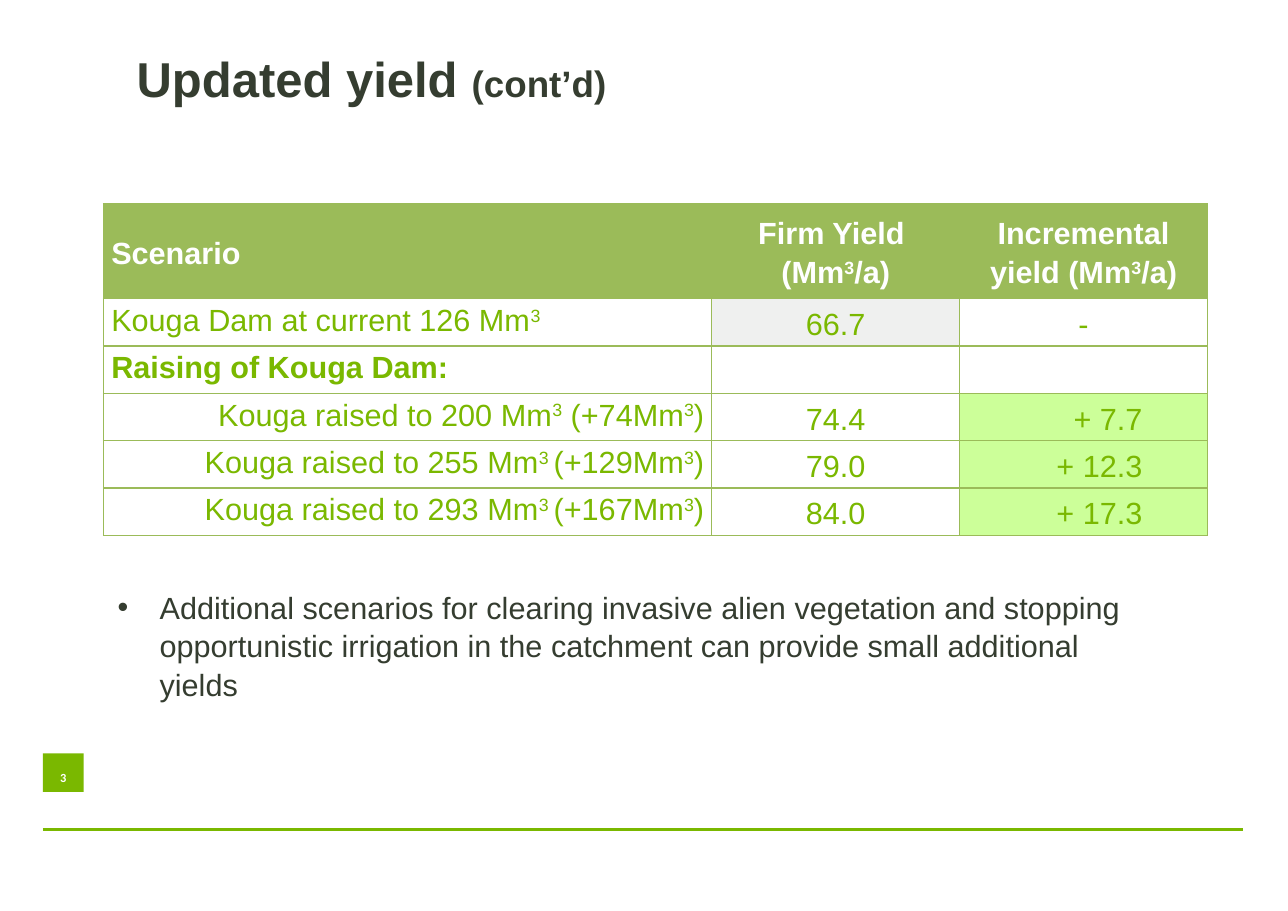
from lxml.etree import SubElement
from pptx import Presentation
from pptx.dml.color import RGBColor
from pptx.enum.shapes import MSO_CONNECTOR, MSO_SHAPE
from pptx.enum.text import MSO_ANCHOR, MSO_AUTO_SIZE, PP_ALIGN
from pptx.oxml.ns import qn
from pptx.util import Pt

PX = 9144  # EMU per px, 100 px to the inch
GREEN, OLIVE, INK, WHITE = "7AB800", "9BBB59", "353D30", "FFFFFF"
GREY, MINT = "EFF0EF", "CCFF99"
LEFT, CENTER, RIGHT = PP_ALIGN.LEFT, PP_ALIGN.CENTER, PP_ALIGN.RIGHT


def px(length):
    return length * PX


def color(hex_code):
    return RGBColor.from_string(hex_code)


def write(paragraph, text, size=20, ink=INK, bold=False, font="Arial",
          align=LEFT, spacing=1.0, before=0, after=0, baseline=0):
    """Add text; parts between ^ marks are superscript, \n breaks the line."""
    paragraph.alignment = align
    paragraph.line_spacing = spacing
    paragraph.space_before, paragraph.space_after = Pt(before), Pt(after)
    for part_index, part in enumerate(text.split("^")):
        shift = 30000 if part_index % 2 else baseline
        for line_index, line in enumerate(part.split("\n")):
            if line_index:
                paragraph.add_line_break()
            if not line:
                continue
            run = paragraph.add_run()
            run.text = line
            run.font.name, run.font.size, run.font.bold = font, Pt(size), bold
            run.font.color.rgb = color(ink)
            if shift:
                run.font._element.set("baseline", str(shift))


class YieldSlide:
    def __init__(self, deck):
        self.slide = deck.slides.add_slide(deck.slide_layouts[5])
        self.shapes = self.slide.shapes

    def rule(self, x1, x2, y):
        rule = self.shapes.add_connector(
            MSO_CONNECTOR.STRAIGHT, px(x1), px(y), px(x2), px(y))
        rule.line.color.rgb, rule.line.width = color(GREEN), Pt(1.5)
        SubElement(rule._element.spPr, qn("a:effectLst"))

    def page_number(self, text, *box):
        badge = self.shapes.add_shape(MSO_SHAPE.RECTANGLE, *map(px, box))
        badge.shadow.inherit = False
        badge.fill.solid()
        badge.fill.fore_color.rgb = color(GREEN)
        badge.line.fill.background()
        frame = badge.text_frame
        frame.margin_left = frame.margin_right = frame.margin_top = 0
        frame.margin_bottom = px(4)
        frame.vertical_anchor = MSO_ANCHOR.MIDDLE
        write(frame.paragraphs[0], text, size=14, ink=WHITE, bold=True,
              font="Calibri", align=CENTER, baseline=-25000)

    def title(self, text, suffix, *box):
        title = self.shapes.title
        title.left, title.top, title.width, title.height = map(px, box)
        frame = title.text_frame
        frame.auto_size = MSO_AUTO_SIZE.NONE
        frame.vertical_anchor = MSO_ANCHOR.TOP
        write(frame.paragraphs[0], text, size=32, bold=True)
        write(frame.paragraphs[0], suffix, size=24, bold=True)

    def bullet(self, text, *box):
        frame = self.shapes.add_textbox(*map(px, box)).text_frame
        frame.word_wrap = True
        paragraph = frame.paragraphs[0]
        properties = paragraph._p.get_or_add_pPr()
        properties.set("marL", str(px(38)))
        properties.set("indent", str(-px(38)))
        SubElement(properties, qn("a:buFont"), typeface="Arial")
        SubElement(properties, qn("a:buChar"), char="•")
        write(paragraph, text, spacing=1.05, after=6)

    def borders(self, cell):
        properties = cell._tc.get_or_add_tcPr()
        for index, side in enumerate(("lnL", "lnR", "lnT", "lnB")):
            border = properties.makeelement(qn(f"a:{side}"), w=str(Pt(1)))
            fill = SubElement(border, qn("a:solidFill"))
            SubElement(fill, qn("a:srgbClr"), val=OLIVE)
            properties.insert(index, border)

    def cell(self, cell, text, fill=None, anchor=MSO_ANCHOR.MIDDLE,
             right_margin=7, **style):
        cell.margin_left, cell.margin_right = px(7), px(right_margin)
        cell.margin_top = cell.margin_bottom = 0
        cell.vertical_anchor = anchor
        if fill:
            cell.fill.solid()
            cell.fill.fore_color.rgb = color(fill)
        else:
            cell.fill.background()
        self.borders(cell)
        write(cell.text_frame.paragraphs[0], text, spacing=1.15, before=5, **style)

    def table(self, left, top, widths, heights):
        table = self.shapes.add_table(
            len(heights), len(widths), px(left), px(top),
            px(sum(widths)), px(sum(heights))).table
        table.first_row = table.horz_banding = False
        for column, width in zip(table.columns, widths):
            column.width = px(width)
        for row, height in zip(table.rows, heights):
            row.height = px(height)
        return table


def main():
    deck = Presentation()
    deck.slide_width, deck.slide_height = px(1169), px(827)
    page = YieldSlide(deck)

    # Footer
    page.rule(39, 1128, 753)
    page.page_number("3", 39, 684, 37, 35)

    # Heading
    page.title("Updated yield ", "(cont’d)", 114, 39, 888, 98)

    # Yield table
    headings = ("Scenario", "Firm Yield \n(Mm^3^/a)", "Incremental yield (Mm^3^/a)")
    scenarios = [
        ("Kouga Dam at current 126 Mm^3^", "66.7", "-"),
        ("Raising of Kouga Dam:", "", ""),
        ("Kouga raised to 200 Mm^3^ (+74Mm^3^)", "74.4", "+ 7.7"),
        ("Kouga raised to 255 Mm^3 ^(+129Mm^3^)", "79.0", "+ 12.3"),
        ("Kouga raised to 293 Mm^3 ^(+167Mm^3^)", "84.0", "+ 17.3"),
    ]
    yields = page.table(94, 185, [552, 225, 225], [86] + [43] * len(scenarios))
    for column, heading in enumerate(headings):
        page.cell(yields.cell(0, column), heading, fill=OLIVE, ink=WHITE,
                  bold=True, align=CENTER if column else LEFT)
    for row, (scenario, firm, increment) in enumerate(scenarios, 1):
        raised = increment.startswith("+")
        page.cell(yields.cell(row, 0), scenario, anchor=MSO_ANCHOR.TOP, ink=GREEN,
                  bold=scenario.endswith(":"), align=RIGHT if raised else LEFT)
        page.cell(yields.cell(row, 1), firm, fill=GREY if row == 1 else None,
                  ink=GREEN, align=CENTER)
        page.cell(yields.cell(row, 2), increment, fill=MINT if raised else None,
                  ink=GREEN, align=RIGHT if raised else CENTER,
                  right_margin=59 if raised else 7)

    # Remark
    page.bullet("Additional scenarios for clearing invasive alien vegetation and "
                "stopping opportunistic irrigation in the catchment can provide "
                "small additional yields", 97, 528, 965, 127)

    deck.save("out.pptx")


if __name__ == "__main__":
    main()
